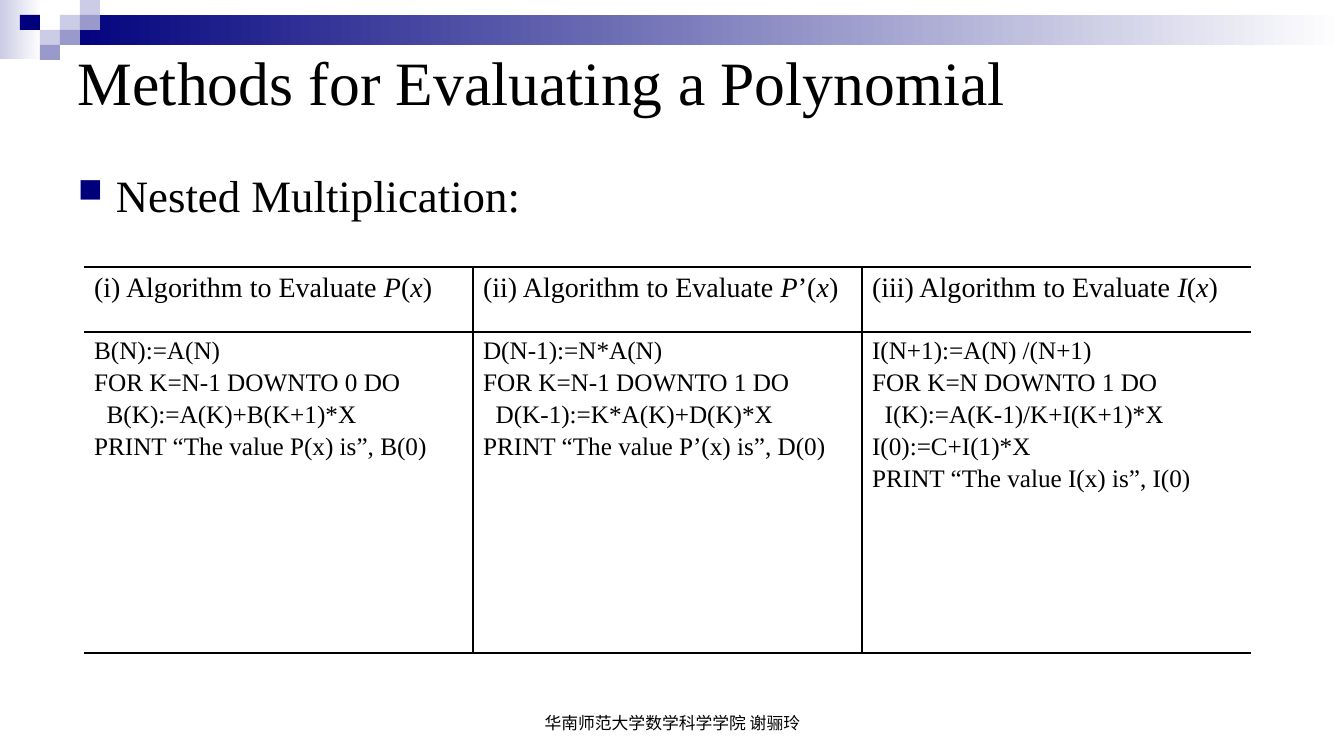
"""Builds the slide on nested multiplication for evaluating a polynomial."""
from lxml import etree
from pptx import Presentation
from pptx import util as u
from pptx.dml.color import RGBColor
from pptx.enum import shapes, text
from pptx.oxml import ns

EMU_PER_PX = 914400 / 100.8
FONT = "Times New Roman"
BLACK = RGBColor(0x00, 0x00, 0x00)
WHITE = RGBColor(0xFF, 0xFF, 0xFF)
NAVY = RGBColor(0x00, 0x00, 0x7D)
LILAC = RGBColor(0x99, 0x99, 0xCC)
PALE = RGBColor(0xCC, 0xCC, 0xE6)

GRADIENT_BARS = [((0, 0, 42, 59), PALE), ((60, 15, 1284, 30), NAVY)]
MOSAIC = [
    (60, 15, PALE), (80, 0, PALE), (80, 15, LILAC), (40, 30, PALE),
    (20, 15, NAVY), (60, 30, LILAC), (40, 45, LILAC),
]
ALGORITHMS = [
    ("i", "P", "", [
        "B(N):=A(N)",
        "FOR K=N-1 DOWNTO 0 DO",
        "  B(K):=A(K)+B(K+1)*X",
        "PRINT “The value P(x) is”, B(0)",
    ]),
    ("ii", "P", "’", [
        "D(N-1):=N*A(N)",
        "FOR K=N-1 DOWNTO 1 DO",
        "  D(K-1):=K*A(K)+D(K)*X",
        "PRINT “The value P’(x) is”, D(0)",
    ]),
    ("iii", "I", "", [
        "I(N+1):=A(N) /(N+1)",
        "FOR K=N DOWNTO 1 DO",
        "  I(K):=A(K-1)/K+I(K+1)*X",
        "I(0):=C+I(1)*X",
        "PRINT “The value I(x) is”, I(0)",
    ]),
]


def px(*lengths):
    """Turn pixel lengths into a list of EMU lengths."""
    return [u.Emu(round(length * EMU_PER_PX)) for length in lengths]


def apply(target, **values):
    """Set each given value as an attribute of the target."""
    for name, value in values.items():
        setattr(target, name, value)


def add_block(slide, box, colour, fade=False):
    """Add a plain rectangle, optionally fading to white on the right."""
    block = slide.shapes.add_shape(shapes.MSO_SHAPE.RECTANGLE, *px(*box))
    block.shadow.inherit = False
    block.line.fill.background()
    if fade:
        block.fill.gradient()
        block.fill.gradient_angle = 0
        for stop, shade in zip(block.fill.gradient_stops, (colour, WHITE)):
            stop.color.rgb = shade
    else:
        block.fill.solid()
        block.fill.fore_color.rgb = colour


def write_run(paragraph, words, size, italic=False):
    """Append a formatted run to a paragraph."""
    run = paragraph.add_run()
    run.text = words
    apply(run.font, name=FONT, size=u.Pt(size), italic=italic)
    run.font.color.rgb = BLACK


def add_label(slide, box, words, size, anchor, align=text.PP_ALIGN.LEFT):
    """Add a one-paragraph text box and return its paragraph."""
    frame = slide.shapes.add_textbox(*px(*box)).text_frame
    apply(frame, word_wrap=True, vertical_anchor=anchor)
    paragraph = frame.paragraphs[0]
    paragraph.alignment = align
    write_run(paragraph, words, size)
    return paragraph


def add_bullet(paragraph):
    """Give a paragraph a navy square bullet with a hanging indent."""
    properties = paragraph._p.get_or_add_pPr()
    indent, = px(38)
    properties.set("marL", str(indent))
    properties.set("indent", str(-indent))
    colour = etree.SubElement(properties, ns.qn("a:buClr"))
    etree.SubElement(colour, ns.qn("a:srgbClr"), val=str(NAVY))
    etree.SubElement(properties, ns.qn("a:buSzPct"), val="75000")
    etree.SubElement(properties, ns.qn("a:buChar"), char="■")


def style_cell(cell, ruled_sides):
    """Rule the named sides of a cell in black and clear its fill."""
    properties = cell._tc.get_or_add_tcPr()
    for side in "LRTB":
        rule = etree.SubElement(properties, ns.qn(f"a:ln{side}"), w=str(u.Pt(1)))
        if side in ruled_sides:
            ink = etree.SubElement(rule, ns.qn("a:solidFill"))
            etree.SubElement(ink, ns.qn("a:srgbClr"), val=str(BLACK))
        else:
            etree.SubElement(rule, ns.qn("a:noFill"))
    cell.fill.background()


def write_code(frame, code):
    """Write one code line per paragraph."""
    for index, line in enumerate(code):
        paragraph = frame.add_paragraph() if index else frame.paragraphs[0]
        if index:
            paragraph.space_before = u.Pt(3)
        write_run(paragraph, line, 18)


def add_algorithms(slide):
    """Add the table with one algorithm in each column."""
    last = len(ALGORITHMS) - 1
    table = slide.shapes.add_table(2, last + 1, *px(84, 267, 1167, 386)).table
    apply(table, first_row=False, horz_banding=False)
    for row, height in zip(table.rows, px(65, 321)):
        row.height = height
    for index, (numeral, letter, prime, code) in enumerate(ALGORITHMS):
        table.columns[index].width, = px(389)
        sides = "TB" + "L" * (index > 0) + "R" * (index < last)
        heading, body = table.cell(0, index), table.cell(1, index)
        for cell in (heading, body):
            style_cell(cell, sides)
        title = heading.text_frame.paragraphs[0]
        write_run(title, f"({numeral}) Algorithm to Evaluate ", 20)
        for words, italic in ((letter, True), (f"{prime}(", False), ("x", True), (")", False)):
            write_run(title, words, 20, italic)
        write_code(body.text_frame, code)


def main():
    """Build and save the slide."""
    deck = Presentation()
    deck.slide_width, deck.slide_height = px(1344, 756)
    slide = deck.slides.add_slide(deck.slide_layouts[6])
    for box, colour in GRADIENT_BARS:
        add_block(slide, box, colour, fade=True)
    for left, top, colour in MOSAIC:
        add_block(slide, (left, top, 20, 15), colour)
    add_label(slide, (68, 5, 1210, 151), "Methods for Evaluating a Polynomial", 44,
              text.MSO_ANCHOR.MIDDLE)
    add_bullet(add_label(slide, (68, 163, 1210, 68), "Nested Multiplication:", 32,
                         text.MSO_ANCHOR.TOP))
    add_algorithms(slide)
    add_label(slide, (460, 688, 425, 50), "华南师范大学数学科学学院 谢骊玲", 12,
              text.MSO_ANCHOR.BOTTOM, text.PP_ALIGN.CENTER)
    deck.save("out.pptx")


if __name__ == "__main__":
    main()
